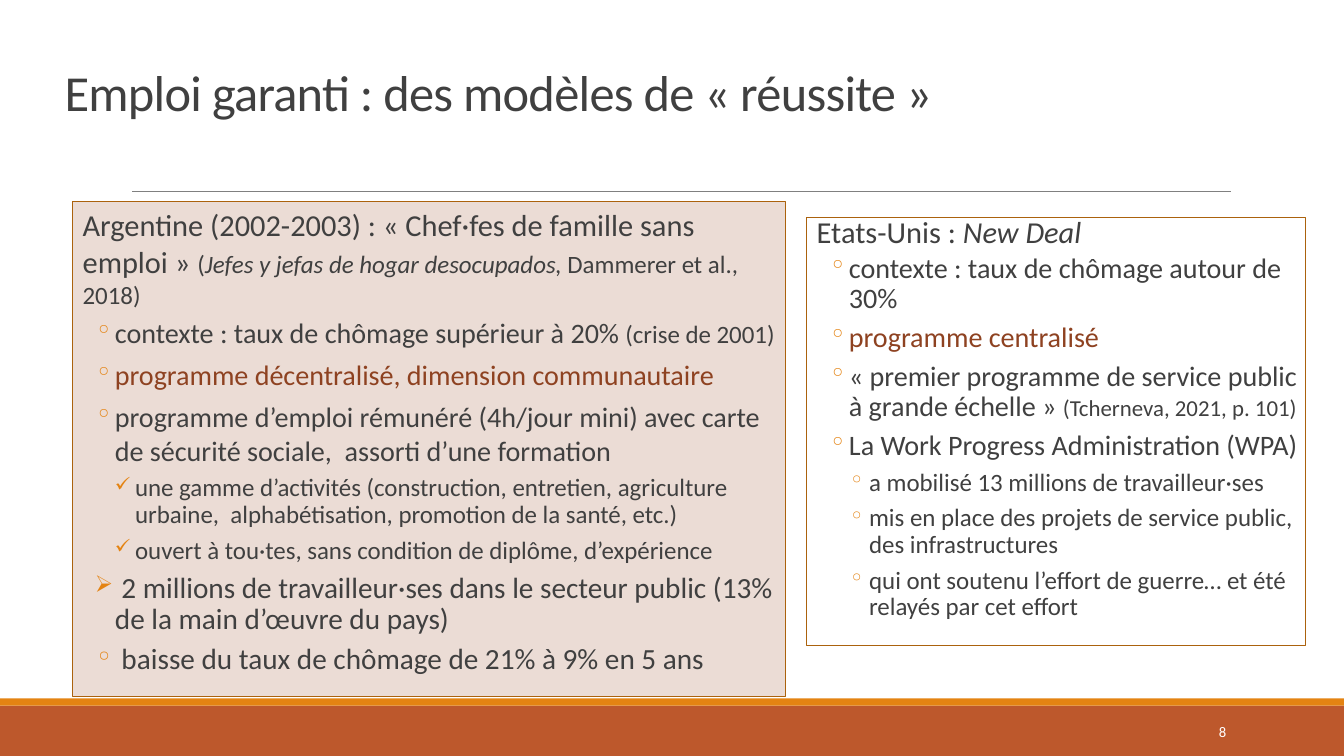
from lxml.etree import SubElement
from pptx import Presentation
from pptx.dml.color import RGBColor
from pptx.enum.shapes import MSO_CONNECTOR, MSO_SHAPE
from pptx.enum.text import MSO_ANCHOR, PP_ALIGN
from pptx.oxml.ns import qn
from pptx.util import Inches, Pt

DARK, RUST, ORANGE = "404040", "8E4221", "E48312"
HEAD, MAIN, POINT, SUB, CITE = 21.7, 20.1, 20.9, 17.8, 16.3

# Each paragraph: level, bullet, line spacing, runs of (text, size, style)
ARGENTINA = [
    (0, None, 1, [
        ("Argentine (2002-2003) : « Chef·fes de famille sans emploi » ", HEAD, {}),
        ("(", SUB, {}),
        ("Jefes y jefas de hogar desocupados, ", SUB, {"italic": True}),
        ("Dammerer et al., 2018)", SUB, {})]),
    (1, "◦", 1, [("contexte : taux de chômage supérieur à 20% ", MAIN, {}),
                 ("(crise de 2001)", SUB, {})]),
    (1, "◦", 1, [("programme décentralisé, dimension communautaire", MAIN,
                  {"color": RUST})]),
    (1, "◦", 1, [("programme d’emploi rémunéré (4h/jour mini) avec carte de "
                  "sécurité sociale,  assorti d’une formation", MAIN, {})]),
    (2, "✓", 0.9, [("une gamme d’activités (construction, entretien, agriculture "
                    "urbaine,  alphabétisation, promotion de la santé, etc.)", SUB, {})]),
    (2, "✓", 0.9, [("ouvert à tou·tes, sans condition de diplôme, d’expérience",
                    SUB, {})]),
    (1, "➢", 0.9, [(" 2 millions de travailleur·ses dans le secteur public (13% "
                    "de la main d’œuvre du pays)", POINT, {})]),
    (1, "◦", 0.9, [(" baisse du taux de chômage de 21% à 9% en 5 ans", POINT, {})]),
]
STATES = [
    (0, None, 0.7, [("Etats-Unis : ", HEAD, {}),
                    ("New Deal", HEAD, {"italic": True})]),
    (1, "◦", 0.9, [("contexte : taux de chômage autour de 30%", MAIN, {})]),
    (1, "◦", 0.9, [("programme centralisé", MAIN, {"color": RUST})]),
    (1, "◦", 0.9, [("« premier programme de service public à grande échelle » ",
                    MAIN, {}),
                   ("(Tcherneva, 2021, p. 101)", CITE, {})]),
    (1, "◦", 0.9, [("La Work Progress Administration (WPA)", MAIN, {})]),
    (2, "◦", 0.9, [("a mobilisé 13 millions de travailleur·ses", SUB, {})]),
    (2, "◦", 0.9, [("mis en place des projets de service public, "
                    "des infrastructures", SUB, {})]),
    (2, "◦", 0.9, [("qui ont soutenu l’effort de guerre… et été relayés "
                    "par cet effort", SUB, {})]),
]


def paint(target, color):
    """Give a fill a solid colour, or a font or line its colour."""
    if hasattr(target, "solid"):
        target.solid()
        target.fore_color.rgb = RGBColor.from_string(color)
    else:
        target.color.rgb = RGBColor.from_string(color)


def assign(target, values):
    for name, value in values.items():
        setattr(target, name, value)


def add_run(para, text, size, color=DARK, italic=False):
    run = para.add_run()
    run.text = text
    assign(run.font, {"name": "Calibri", "size": Pt(size), "italic": italic})
    paint(run.font, color)
    return run


def add_rect(slide, box, fill=None, line=None):
    rect = slide.shapes.add_shape(MSO_SHAPE.RECTANGLE, *map(Inches, box))
    rect.shadow.inherit = False
    if fill:
        paint(rect.fill, fill)
    else:
        rect.fill.background()
    if line:
        paint(rect.line, line)
        rect.line.width = Pt(0.75)
    else:
        rect.line.fill.background()
    return rect


def add_rule(slide, left, right, top):
    rule = slide.shapes.add_connector(
        MSO_CONNECTOR.STRAIGHT, *map(Inches, (left, top, right, top)))
    paint(rule.line, "808080")
    rule.line.width = Pt(0.5)
    SubElement(rule._element.spPr, qn("a:effectLst"))


def set_bullet(para, level, mark):
    """Set the indents of a paragraph and its bullet, if it has one."""
    props = para._p.get_or_add_pPr()
    margin, hang = (0.22 + 0.2 * level, -0.2) if mark else (0.1, 0)
    props.set("marL", str(Inches(margin)))
    props.set("indent", str(Inches(hang)))
    if mark:
        tint = SubElement(props, qn("a:buClr"))
        SubElement(tint, qn("a:srgbClr"), val=ORANGE)
        SubElement(props, qn("a:buSzPct"), val="80000")
        SubElement(props, qn("a:buChar"), char=mark)
    else:
        SubElement(props, qn("a:buNone"))


def add_panel(slide, box, items, fill=None, before=6):
    frame = add_rect(slide, box, fill, "AB620D").text_frame
    assign(frame, {"word_wrap": True, "vertical_anchor": MSO_ANCHOR.TOP,
                   "margin_left": 0, "margin_right": 0,
                   "margin_top": Inches(0.05), "margin_bottom": Inches(0.05)})
    for i, (level, mark, spacing, runs) in enumerate(items):
        para = frame.add_paragraph() if i else frame.paragraphs[0]
        assign(para, {"level": level, "alignment": PP_ALIGN.LEFT,
                      "line_spacing": spacing,
                      "space_before": Pt(2 if level else before),
                      "space_after": Pt(4 if level else 2)})
        set_bullet(para, level, mark)
        for text, size, style in runs:
            add_run(para, text, size, **style)


def set_title(slide, box, text):
    title = slide.shapes.title
    assign(title, dict(zip(("left", "top", "width", "height"), map(Inches, box))))
    frame = title.text_frame
    assign(frame, {"word_wrap": True, "vertical_anchor": MSO_ANCHOR.BOTTOM})
    para = frame.paragraphs[0]
    assign(para, {"alignment": PP_ALIGN.LEFT, "line_spacing": 0.85})
    run = add_run(para, text, 36)
    run.font._element.set("spc", "-50")


def add_footer(slide, top, width, height, number):
    strip = 0.07
    add_rect(slide, (0, top + strip, width, height - strip), "BD582C")
    add_rect(slide, (0, top, width, strip), ORANGE)
    box = slide.shapes.add_textbox(
        *map(Inches, (width - 2.5, top + 0.13, 1.43, 0.4)))
    frame = box.text_frame
    assign(frame, {"word_wrap": True, "vertical_anchor": MSO_ANCHOR.MIDDLE})
    para = frame.paragraphs[0]
    para.alignment = PP_ALIGN.RIGHT
    add_run(para, number, 10.5, "FFFFFF")


def main():
    deck = Presentation()
    assign(deck, {"slide_width": Inches(13.33), "slide_height": Inches(7.5)})
    slide = deck.slides.add_slide(deck.slide_layouts[5])
    add_footer(slide, 6.93, 13.33, 0.57, "8")
    add_rule(slide, 1.31, 12.21, 1.9)
    set_title(slide, (0.54, 0.38, 9.68, 0.88),
              "Emploi garanti : des modèles de « réussite »")
    add_panel(slide, (0.72, 2, 7.07, 4.91), ARGENTINA, "EBDCD5")
    add_panel(slide, (8, 2.16, 4.95, 4.24), STATES, before=5.2)
    deck.save("out.pptx")


if __name__ == "__main__":
    main()
